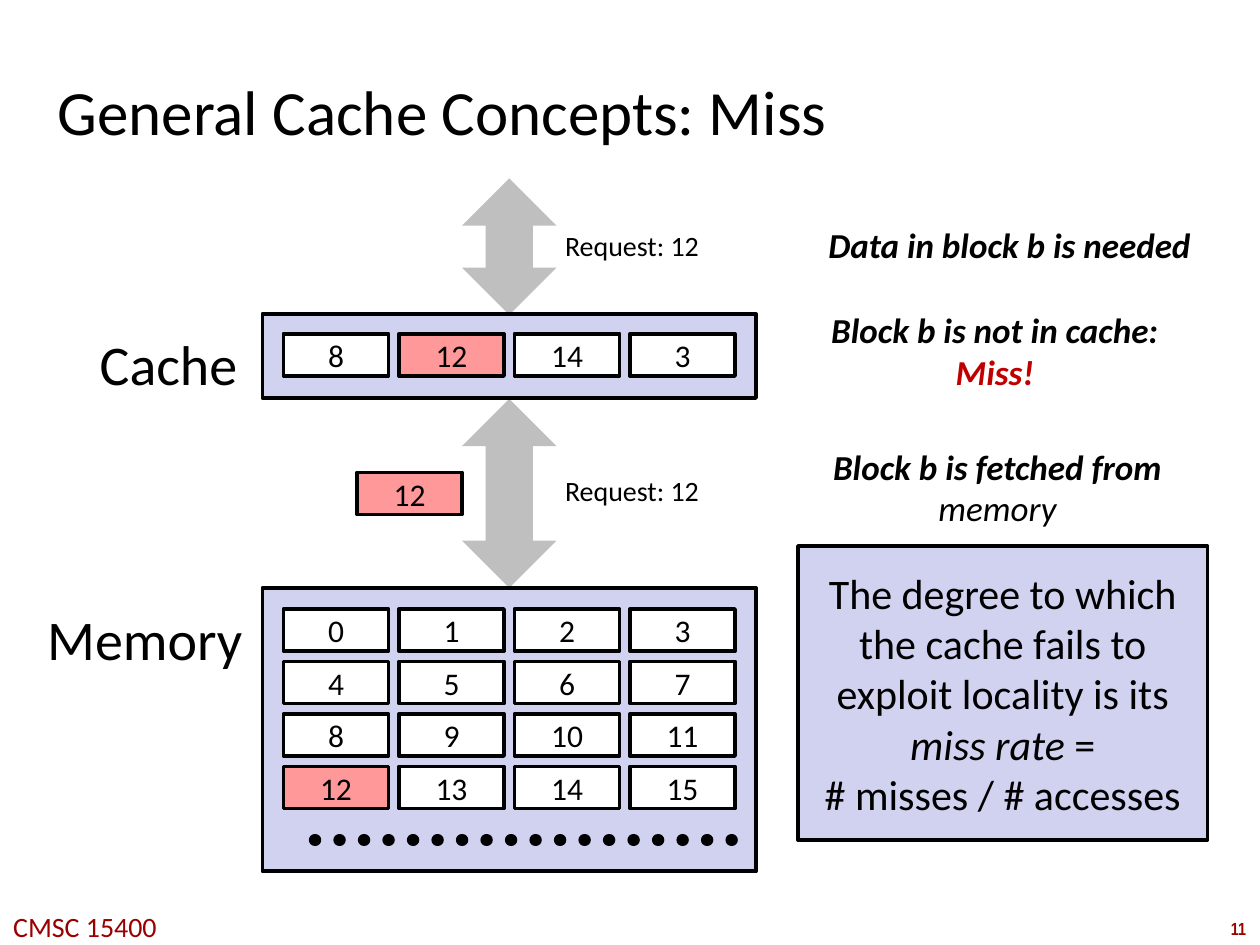
from dataclasses import dataclass

from lxml import etree
from pptx import Presentation
from pptx.dml.color import RGBColor
from pptx.enum.dml import MSO_LINE
from pptx.enum.shapes import MSO_CONNECTOR, MSO_SHAPE
from pptx.enum.text import MSO_ANCHOR, MSO_AUTO_SIZE, PP_ALIGN
from pptx.oxml.ns import qn
from pptx.util import Emu, Pt

RECTANGLE = MSO_SHAPE.RECTANGLE
DOUBLE_ARROW = MSO_SHAPE.UP_DOWN_ARROW
STRAIGHT = MSO_CONNECTOR.STRAIGHT
DOTTED = MSO_LINE.ROUND_DOT
CENTER, LEFT = PP_ALIGN.CENTER, PP_ALIGN.LEFT
MIDDLE, TOP = MSO_ANCHOR.MIDDLE, MSO_ANCHOR.TOP
NO_AUTOFIT = MSO_AUTO_SIZE.NONE

EMU_PER_PX = 7620  # 120 px to the inch
TITLE_ONLY = 5


@dataclass(frozen=True)
class Theme:
    font: str = "Calibri"
    number_font: str = "Arial Narrow"
    black: str = "000000"
    white: str = "FFFFFF"
    panel: str = "D1D1F0"
    requested: str = "FF9999"
    arrow: str = "BFBFBF"
    miss: str = "C00000"
    footer: str = "990000"
    title_size: int = 36
    label_size: int = 32
    summary_size: int = 24
    note_size: int = 20
    block_size: int = 18
    small_size: int = 16
    number_size: int = 10
    outline: float = 2.25
    dots: int = 7


THEME = Theme()


@dataclass(frozen=True)
class Area:
    left: int
    top: int
    width: int
    height: int

    def emu(self) -> list[Emu]:
        return [px(n) for n in (self.left, self.top, self.width, self.height)]


@dataclass(frozen=True)
class Span:
    text: str
    size: int
    color: str = THEME.black
    bold: bool = False
    italic: bool = False
    font: str = THEME.font


@dataclass(frozen=True)
class Label:
    area: Area
    lines: list[list[Span]]
    anchor: MSO_ANCHOR = TOP
    spacing: float = 1.0


def px(length: int) -> Emu:
    return Emu(length * EMU_PER_PX)


def rgb(color: str) -> RGBColor:
    return RGBColor.from_string(color)


def write(frame, lines: list[list[Span]], align=CENTER, anchor=MIDDLE, spacing=1.0) -> None:
    frame.vertical_anchor = anchor
    for index, spans in enumerate(lines):
        para = frame.paragraphs[0] if index == 0 else frame.add_paragraph()
        para.alignment = align
        para.line_spacing = spacing
        for span in spans:
            run = para.add_run()
            run.text = span.text
            run.font.name = span.font
            run.font.size = Pt(span.size)
            run.font.bold = span.bold
            run.font.italic = span.italic
            run.font.color.rgb = rgb(span.color)


def add_label(page, label: Label) -> None:
    frame = page.shapes.add_textbox(*label.area.emu()).text_frame
    frame.word_wrap = False
    write(frame, label.lines, anchor=label.anchor, spacing=label.spacing)


def add_box(page, area: Area, fill: str, lines: list[list[Span]]) -> None:
    box = page.shapes.add_shape(RECTANGLE, *area.emu())
    box.shadow.inherit = False
    box.fill.solid()
    box.fill.fore_color.rgb = rgb(fill)
    box.line.color.rgb = rgb(THEME.black)
    box.line.width = Pt(THEME.outline)
    box.text_frame.word_wrap = True
    write(box.text_frame, lines)


def add_block(page, left: int, top: int, number: int) -> None:
    fill = THEME.requested if number == 12 else THEME.white
    add_box(page, Area(left, top, 100, 40), fill, [[Span(str(number), THEME.block_size)]])


def add_block_row(page, top: int, numbers: list[int]) -> None:
    for column, number in enumerate(numbers):
        add_block(page, 270 + 110 * column, top, number)


def add_arrow(page, area: Area) -> None:
    arrow = page.shapes.add_shape(DOUBLE_ARROW, *area.emu())
    arrow.shadow.inherit = False
    arrow.fill.solid()
    arrow.fill.fore_color.rgb = rgb(THEME.arrow)
    arrow.line.fill.background()


def add_dots(page, left: int, right: int, top: int) -> None:
    dots = page.shapes.add_connector(STRAIGHT, px(left), px(top), px(right), px(top))
    dots.line.color.rgb = rgb(THEME.black)
    dots.line.width = Pt(THEME.dots)
    dots.line.dash_style = DOTTED
    properties = dots._element.spPr
    properties.find(qn("a:ln")).set("cap", "rnd")
    etree.SubElement(properties, qn("a:effectLst"))


def add_title(page, text: str) -> None:
    title = page.shapes.title
    title.left, title.top, title.width, title.height = Area(50, 34, 1100, 143).emu()
    frame = title.text_frame
    frame.auto_size = NO_AUTOFIT
    frame.margin_left = frame.margin_right = px(5)
    frame.margin_top = frame.margin_bottom = px(5)
    write(frame, [[Span(text, THEME.title_size)]], align=LEFT)


def plain(area: Area, text: str, size: int, color: str = THEME.black) -> Label:
    return Label(area, [[Span(text, size, color)]])


def note(area: Area, *spans: Span) -> Label:
    return Label(area, [[span] for span in spans], MIDDLE, 0.98)


def strong(text: str, color: str = THEME.black) -> Span:
    return Span(text, THEME.note_size, color, bold=True, italic=True)


LABELS = [
    plain(Area(82, 308, 157, 77), "Cache", THEME.label_size),
    plain(Area(32, 570, 212, 77), "Memory", THEME.label_size),
    plain(Area(524, 212, 156, 44), "Request: 12", THEME.small_size),
    plain(Area(524, 445, 156, 44), "Request: 12", THEME.small_size),
    note(Area(776, 208, 371, 52), strong("Data in block b is needed")),
    note(Area(779, 290, 337, 91), strong("Block b is not in cache:"),
         strong("Miss!", THEME.miss)),
    note(Area(780, 420, 340, 91), strong("Block b is fetched from"),
         Span("memory", THEME.note_size, italic=True)),
    plain(Area(-4, 860, 170, 44), "CMSC 15400", THEME.small_size, THEME.footer),
    Label(Area(1159, 868, 41, 32), [[Span("11", THEME.number_size, THEME.footer,
                                          bold=True, font=THEME.number_font)]]),
]

SUMMARY = [
    [Span("The degree to which the cache fails to exploit locality is its ", THEME.summary_size),
     Span("miss rate ", THEME.summary_size, italic=True),
     Span("=", THEME.summary_size)],
    [Span("# misses / # accesses", THEME.summary_size)],
]


def main() -> None:
    deck = Presentation()
    deck.slide_width, deck.slide_height = px(1200), px(900)
    page = deck.slides.add_slide(deck.slide_layouts[TITLE_ONLY])
    add_title(page, "General Cache Concepts: Miss")

    # Transfers above and below the cache
    add_arrow(page, Area(440, 170, 90, 130))
    add_arrow(page, Area(440, 380, 90, 180))

    # Memory with its blocks
    add_box(page, Area(250, 560, 470, 270), THEME.panel, [])
    for row in range(4):
        add_block_row(page, 580 + 50 * row, list(range(4 * row, 4 * row + 4)))
    add_dots(page, 300, 700, 800)

    # Cache, and the block being fetched
    add_box(page, Area(250, 299, 470, 80), THEME.panel, [])
    add_block_row(page, 318, [8, 12, 14, 3])
    add_block(page, 340, 450, 12)

    # Labels, notes and summary
    for label in LABELS:
        add_label(page, label)
    add_box(page, Area(760, 520, 390, 280), THEME.panel, SUMMARY)

    deck.save("out.pptx")


if __name__ == "__main__":
    main()
